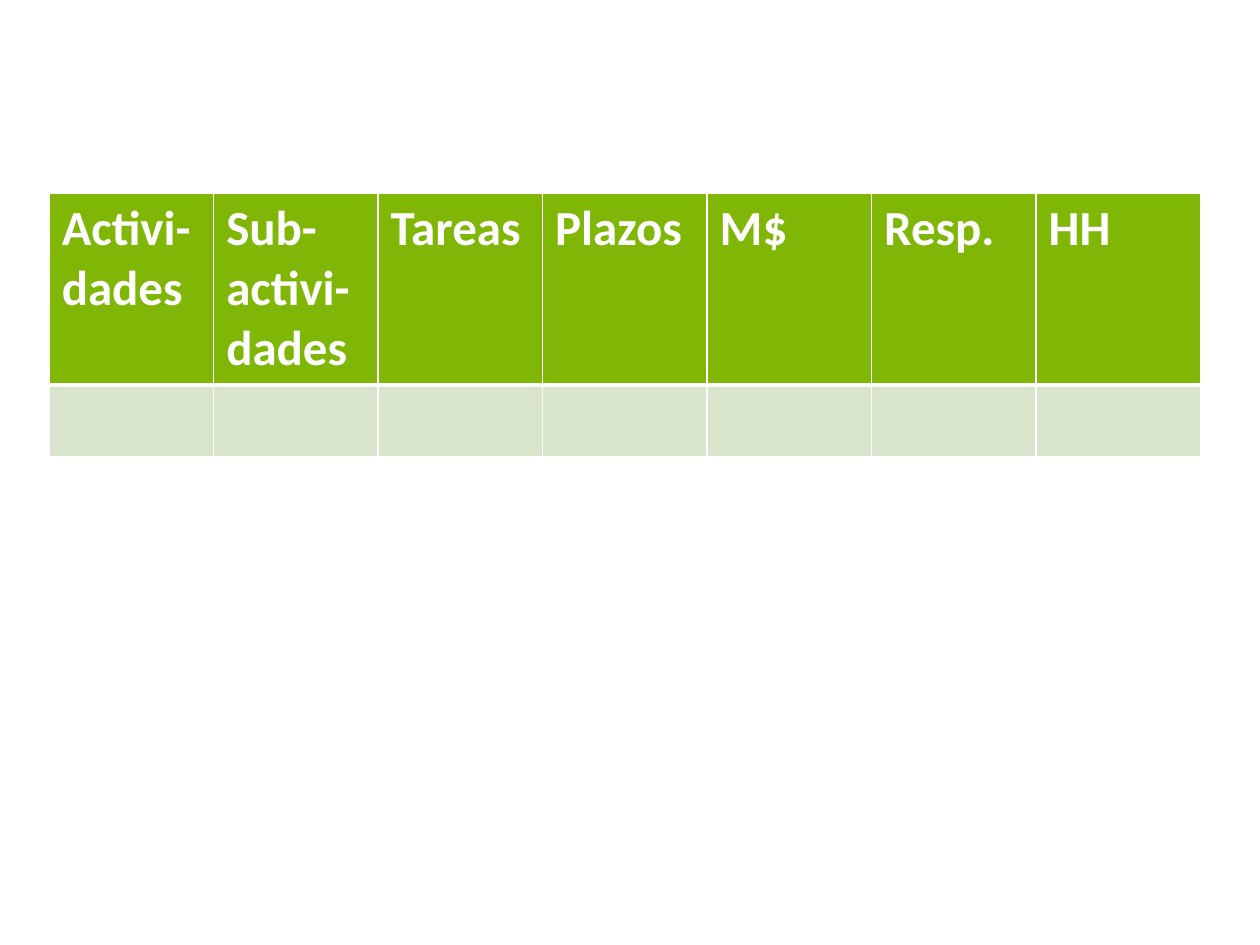
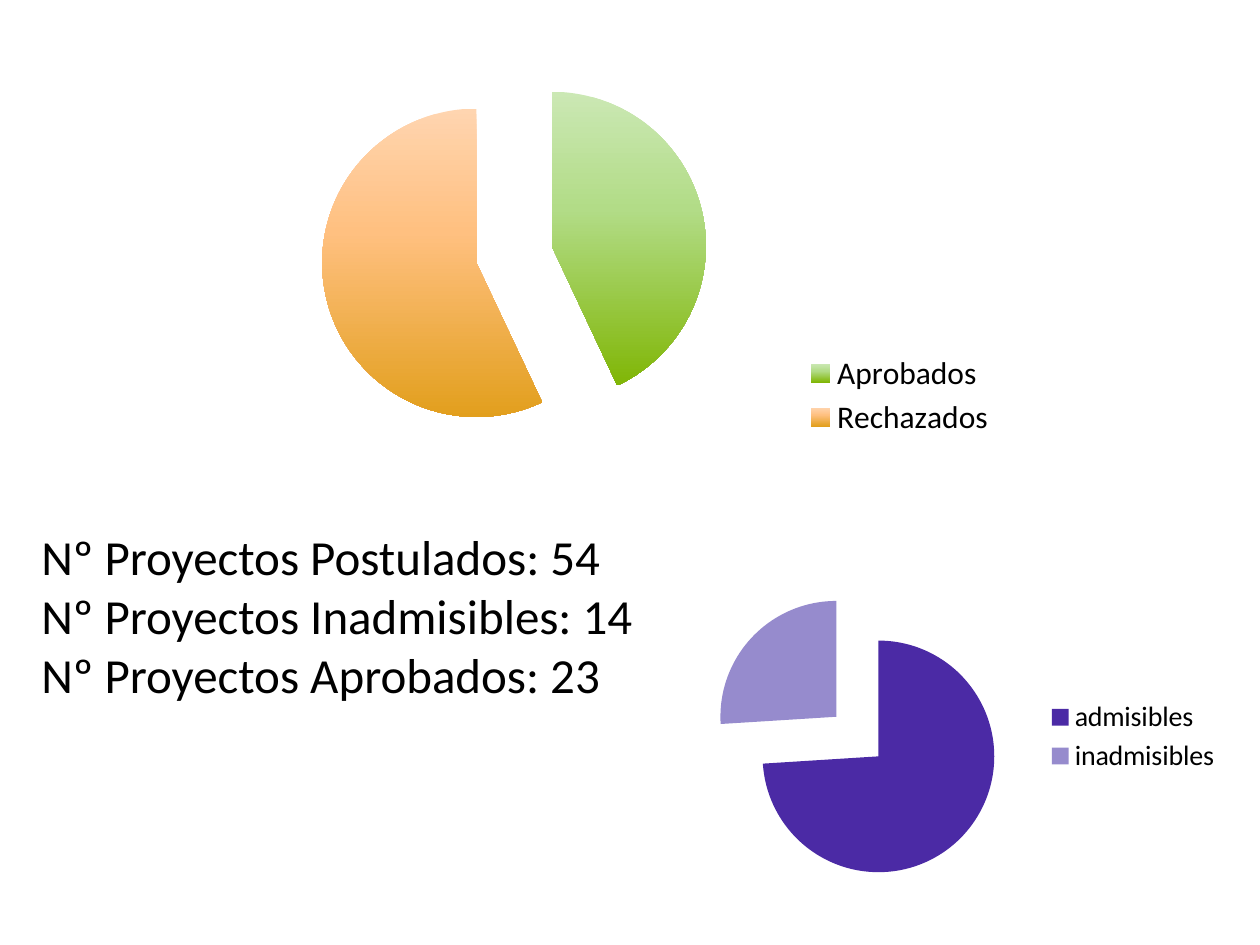
from copy import deepcopy
from dataclasses import dataclass

from lxml.etree import SubElement
from pptx import Presentation
from pptx.chart.chart import Chart
from pptx.chart.data import CategoryChartData
from pptx.dml.color import RGBColor
from pptx.dml.fill import FillFormat
from pptx.enum.chart import XL_CHART_TYPE, XL_LEGEND_POSITION
from pptx.enum.text import MSO_AUTO_SIZE
from pptx.oxml import parse_xml
from pptx.oxml.ns import nsdecls, qn
from pptx.slide import Slide
from pptx.table import _Cell
from pptx.util import Inches, Pt

FONT = "Calibri"
BLACK = "000000"
WHITE = "FFFFFF"
GREEN = "80B606"
ORANGE = "E29F1D"
PALE_GREEN = "D8E5CC"
PURPLE = "4B2AA5"
LILAC = "968BCD"
HEADERS = ("Activi-dades", "Sub-activi-dades", "Tareas", "Plazos", "M$", "Resp.", "HH")
PROJECT_COUNTS = (
    "Nº Proyectos Postulados: 54",
    "Nº Proyectos Inadmisibles: 14",
    "Nº Proyectos Aprobados: 23",
)
Box = tuple[float, float, float, float]


@dataclass
class Pie:
    box: Box
    plot: Box
    legend: Box
    size: int
    categories: tuple[str, ...]
    values: tuple[int, ...]
    fills: tuple[tuple[str, ...], ...]


PIES = (
    Pie((5.39, 4.56, 4.42, 2.6), (0.06, 0.05, 0.52, 0.89), (0.65, 0.37, 0.33, 0.25), 16,
        ("admisibles", "inadmisibles"), (74, 26), ((PURPLE,), (LILAC,))),
    Pie((0.39, 0.33, 9, 3.38), (0.24, 0.04, 0.34, 0.92), (0.66, 0.72, 0.18, 0.22), 18,
        ("Aprobados", "Rechazados"), (43, 57),
        (("CBE8B4", "B2DC87", GREEN), ("FFD5B0", "FFC080", ORANGE))),
)


def rgb(value: str) -> RGBColor:
    return RGBColor.from_string(value)


def set_font(font, size: int, color: str, bold: bool = False) -> None:
    for name, value in {"name": FONT, "size": Pt(size), "bold": bold}.items():
        setattr(font, name, value)
    font.color.rgb = rgb(color)


def set_borders(cell: _Cell, widths: dict[str, int]) -> None:
    tc_pr = cell._tc.get_or_add_tcPr()
    for i, (side, width) in enumerate(widths.items()):
        tc_pr.insert(i, parse_xml(
            f'<a:ln{side} {nsdecls("a")} w="{Pt(width)}"><a:solidFill>'
            f'<a:srgbClr val="{WHITE}"/></a:solidFill></a:ln{side}>'))


def add_plan_table(s: Slide) -> None:
    table = s.shapes.add_table(2, len(HEADERS), *map(Inches, (0.39, 1.53, 9.14, 2.07))).table
    for row, height in zip(table.rows, (1.5, 0.57)):
        row.height = Inches(height)
    for i, header in enumerate(HEADERS):
        top, bottom = table.cell(0, i), table.cell(1, i)
        for cell, color in ((top, GREEN), (bottom, PALE_GREEN)):
            cell.fill.solid()
            cell.fill.fore_color.rgb = rgb(color)
        r = top.text_frame.paragraphs[0].add_run()
        r.text = header
        set_font(r.font, 28, WHITE, True)
        set_borders(top, {"L": 1, "R": 1, "T": 1, "B": 3})
        set_borders(bottom, {"L": 1, "R": 1, "B": 1})


def add_counts(s: Slide) -> None:
    tf = s.shapes.add_textbox(*map(Inches, (0.23, 4.13, 5.02, 1.51))).text_frame
    tf.word_wrap = True
    tf.auto_size = MSO_AUTO_SIZE.SHAPE_TO_FIT_TEXT
    for i, line in enumerate(PROJECT_COUNTS):
        p = tf.add_paragraph() if i else tf.paragraphs[0]
        r = p.add_run()
        r.text = line
        set_font(r.font, 28, BLACK)


def set_layout(chart: Chart, parent: str, box: Box, inner: bool) -> None:
    element = chart._chartSpace.xpath(f".//c:{parent}")[0]
    for old in element.findall(qn("c:layout")):
        element.remove(old)
    layout = parse_xml(f'<c:layout {nsdecls("c")}><c:manualLayout/></c:layout>')
    manual = layout[0]
    values = {"layoutTarget": "inner"} if inner else {}
    values |= {"xMode": "edge", "yMode": "edge"} | dict(zip("xywh", box))
    for name, value in values.items():
        SubElement(manual, qn(f"c:{name}")).set("val", str(value))
    element.insert(0 if inner else 1, layout)


def fill_slice(fill: FillFormat, colors: tuple[str, ...], chart: Chart) -> None:
    if len(colors) == 1:
        fill.solid()
        fill.fore_color.rgb = rgb(colors[0])
        return
    fill.gradient()
    fill.gradient_angle = 270
    stops = chart._chartSpace.xpath(".//a:gsLst")[-1]
    stops.insert(1, deepcopy(stops[0]))
    for stop, color, position in zip(fill.gradient_stops, colors, (0, 0.4, 1)):
        stop.color.rgb = rgb(color)
        stop.position = position


def add_pie(s: Slide, pie: Pie) -> None:
    data = CategoryChartData()
    data.categories = pie.categories
    data.add_series("Series 1", pie.values)
    chart = s.shapes.add_chart(XL_CHART_TYPE.PIE, *map(Inches, pie.box), data).chart
    chart.has_title = False
    chart.has_legend = True
    chart.legend.position = XL_LEGEND_POSITION.RIGHT
    chart.legend.include_in_layout = False
    for font in (chart.font, chart.legend.font):
        set_font(font, pie.size, BLACK)
    plot = chart.plots[0]
    plot.vary_by_categories = True
    for i, colors in enumerate(pie.fills):
        point = plot.series[0].points[i]
        fill_slice(point.format.fill, colors, chart)
        point.format.line.fill.background()
    first_point = chart._chartSpace.xpath(".//c:dPt")[0]
    first_point.addprevious(parse_xml(f'<c:explosion {nsdecls("c")} val="25"/>'))
    set_layout(chart, "plotArea", pie.plot, True)
    set_layout(chart, "legend", pie.legend, False)


def main() -> None:
    prs = Presentation()
    prs.slide_width, prs.slide_height = Inches(10), Inches(7.5)
    blank = prs.slide_layouts[6]
    add_plan_table(prs.slides.add_slide(blank))
    s = prs.slides.add_slide(blank)
    add_counts(s)
    for pie in PIES:
        add_pie(s, pie)
    prs.save("out.pptx")


if __name__ == "__main__":
    main()
